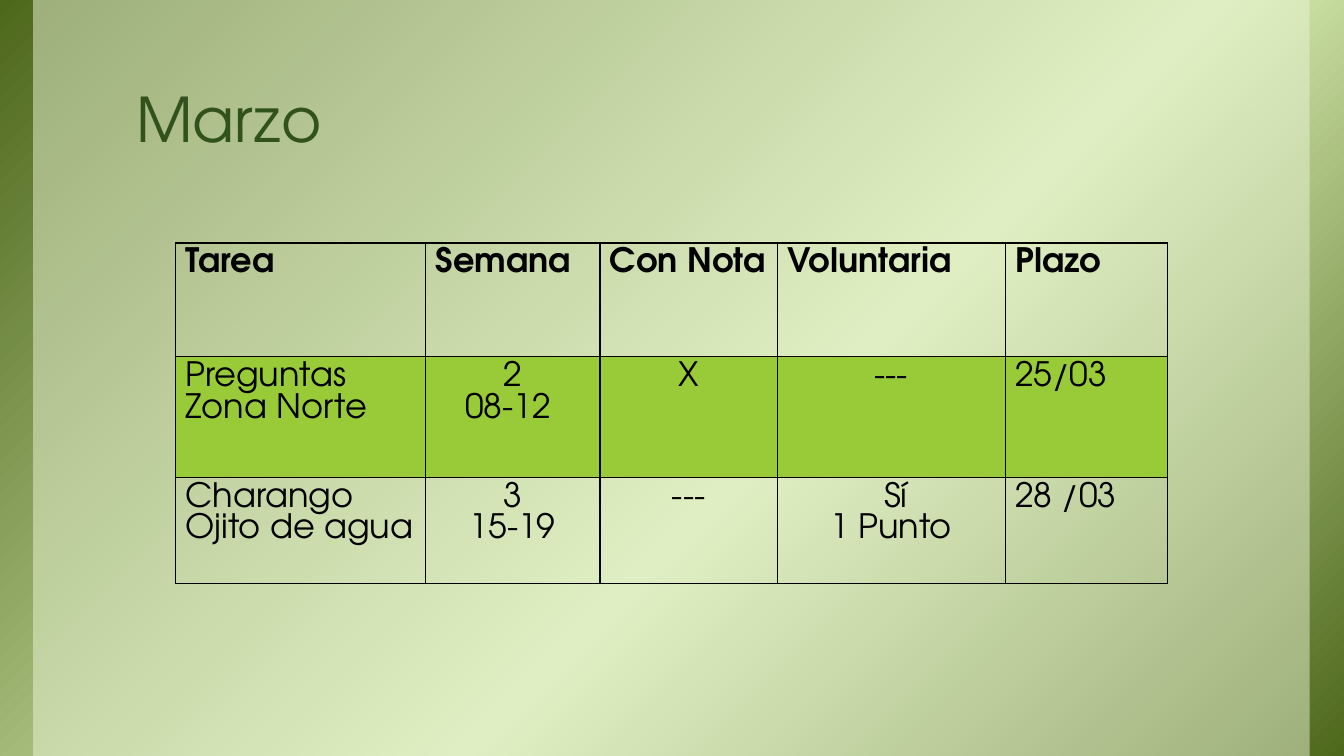
"""Build the March homework slide with its schedule table."""
import pptx
import pptx.util
import pptx.dml.color
import pptx.enum.shapes
import pptx.enum.text
import pptx.oxml
import pptx.oxml.ns

Inches, Pt = pptx.util.Inches, pptx.util.Pt
RGB = pptx.dml.color.RGBColor.from_string
ALIGN = pptx.enum.text.PP_ALIGN
NS = pptx.oxml.ns.nsdecls("a")
FONT = "TeX Gyre Adventor"
COLORS = {"dark": "4D671B", "light": "D6EAAF", "panel": "EBF5D7",
          "title": "31521C", "text": "000000", "band": "99CB38"}


def style(p, size, color, bold=False):
    p.font.name, p.font.size, p.font.bold = FONT, Pt(size), bold
    p.font.color.rgb = RGB(COLORS[color])


def fill_alpha(fill, color, percent):
    fill.solid()
    fill.fore_color.rgb = RGB(COLORS[color])
    clr = fill._xPr.find(".//" + pptx.oxml.ns.qn("a:srgbClr"))
    clr.append(pptx.oxml.parse_xml(f'<a:alpha {NS} val="{percent * 1000}"/>'))


prs = pptx.Presentation()
prs.slide_width, prs.slide_height = Inches(13.33), Inches(7.5)
s = prs.slides.add_slide(prs.slide_layouts[5])

backdrop = []
for x, w in [(0, 13.33), (0.33, 12.66)]:
    sp = s.shapes.add_shape(pptx.enum.shapes.MSO_SHAPE.RECTANGLE,
                            Inches(x), 0, Inches(w), Inches(7.5))
    sp.shadow.inherit = False
    sp.line.fill.background()
    s.shapes._spTree.remove(sp._element)
    s.shapes._spTree.insert(2 + len(backdrop), sp._element)
    backdrop.append(sp)

base, panel = backdrop
stops = "".join(f'<a:gs pos="{pos * 1000}"><a:srgbClr val="{COLORS[c]}"/></a:gs>'
                for pos, c in [(0, "dark"), (58, "light"), (100, "dark")])
base._element.spPr.find(pptx.oxml.ns.qn("a:prstGeom")).addnext(pptx.oxml.parse_xml(
    f'<a:gradFill {NS} rotWithShape="1"><a:gsLst>{stops}</a:gsLst>'
    '<a:lin ang="2700000" scaled="0"/></a:gradFill>'))
fill_alpha(panel.fill, "panel", 50)

title = s.shapes.title
title.left, title.top = Inches(1.22), Inches(0.08)
title.width, title.height = Inches(11.11), Inches(1.53)
tf = title.text_frame
tf.text = "Marzo"
tf.auto_size = pptx.enum.text.MSO_AUTO_SIZE.NONE
tf.vertical_anchor = pptx.enum.text.MSO_ANCHOR.BOTTOM
tf.margin_left = tf.margin_right = Inches(0.13)
tf.margin_top = tf.margin_bottom = Inches(0.07)
p = tf.paragraphs[0]
p.alignment, p.line_spacing = ALIGN.LEFT, 0.85
style(p, 44, "title")

rows = [
    ["Tarea", "Semana", "Con Nota", "Voluntaria", "Plazo"],
    ["Preguntas Zona Norte", "2\n08-12 ", "X", "---", "25/03"],
    ["Charango\nOjito de agua", "3\n15-19", "---", " Sí\n1 Punto", "28 /03"],
]
widths = [2.48, 1.73, 1.76, 2.26, 1.61]
heights = [1.13, 1.2, 1.05]
table = s.shapes.add_table(3, 5, Inches(1.74), Inches(2.41),
                           Inches(sum(widths)), Inches(sum(heights))).table
table.first_row = table.horz_banding = False
for col, w in zip(table.columns, widths):
    col.width = Inches(w)
for row, h in zip(table.rows, heights):
    row.height = Inches(h)

for i, texts in enumerate(rows):
    for j, text in enumerate(texts):
        cell = table.cell(i, j)
        cell.text = text
        for p in cell.text_frame.paragraphs:
            p.alignment = ALIGN.CENTER if i and 0 < j < 4 else ALIGN.LEFT
            style(p, 24, "text", bold=i == 0)
        tcPr = cell._tc.get_or_add_tcPr()
        for side in "LRTB":
            tcPr.append(pptx.oxml.parse_xml(
                f'<a:ln{side} {NS} w="12700"><a:solidFill><a:srgbClr val="{COLORS["text"]}"/>'
                f'</a:solidFill></a:ln{side}>'))
        if i == 1:
            fill_alpha(cell.fill, "band", 20)
        else:
            cell.fill.background()

prs.save("out.pptx")
